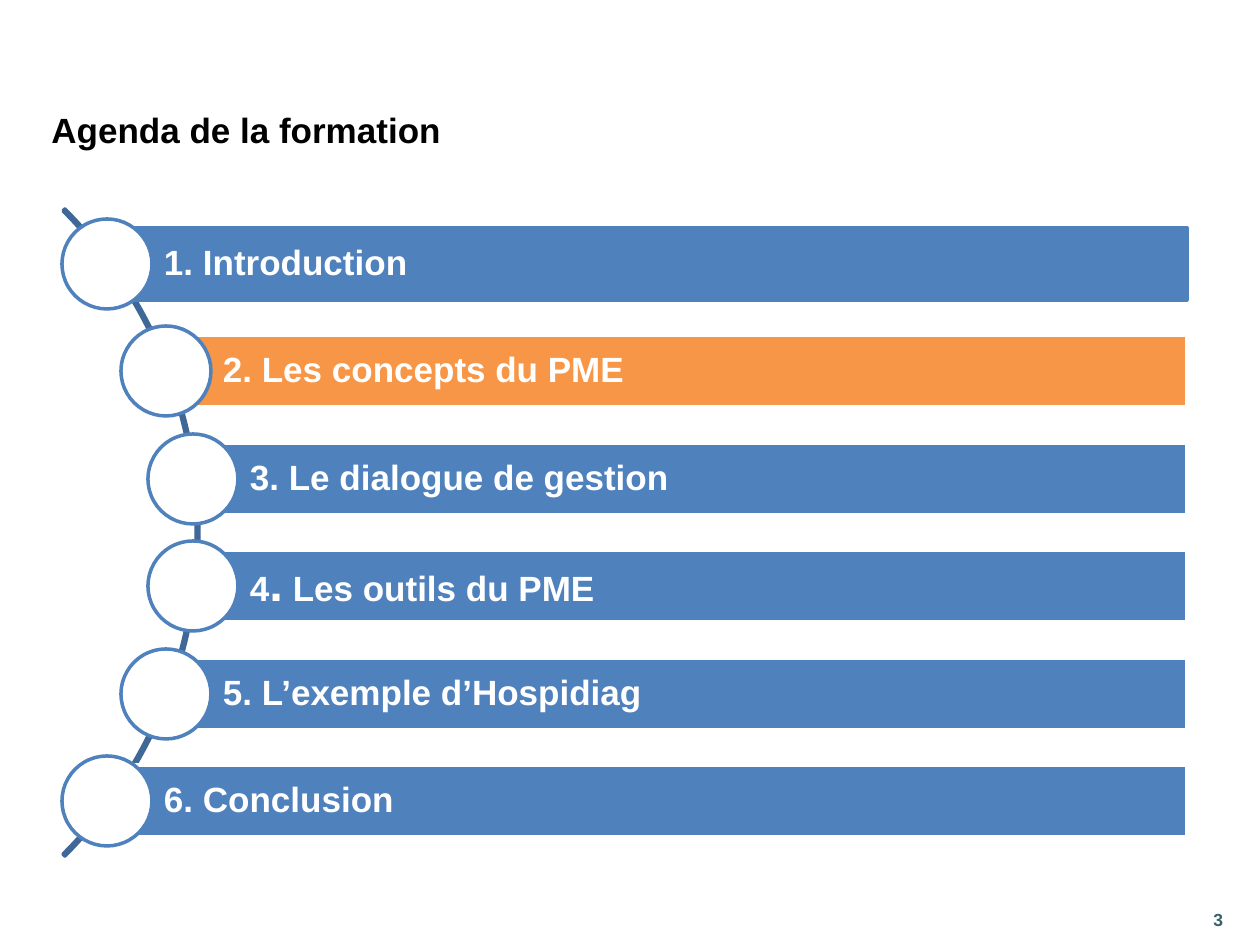
"""Build the training agenda slide: six bars strung along an arc."""
from dataclasses import dataclass

from pptx import Presentation
from pptx import util as u
from pptx.dml import color
from pptx.enum import shapes, text

SCALE = u.Inches(1) / 126
COLORS = {
    "blue": "4F81BD", "orange": "F79646", "arc": "3F6797",
    "white": "FFFFFF", "black": "000000", "page": "36616C",
}
FONT = {"name": "Arial", "bold": True}
FRAME = {"word_wrap": True, "vertical_anchor": text.MSO_ANCHOR.MIDDLE}
BAR_INSETS = {"margin_left": 57, "margin_right": 8, "margin_top": 8, "margin_bottom": 8}
FIRST_Y, LAST_Y, RIGHT = 264, 801, 1187
BAR_H, CIRCLE = 72, 90


@dataclass
class Item:
    """An agenda entry; x is the centre of its circle and the left of its bar."""
    x: int
    runs: list[tuple[str, int]]
    fill: str = "blue"
    line: str = "white"


ITEMS = [
    Item(107, [("1. Introduction", 20)], line="blue"),
    Item(166, [("2. Les concepts du PME", 20)], fill="orange"),
    Item(193, [("3. Le dialogue de gestion", 20)]),
    Item(193, [("4", 20), (".", 28), (" Les outils du PME", 20)]),
    Item(166, [("5. L’exemple d’Hospidiag", 20)]),
    Item(107, [("6. Conclusion", 20)]),
]


def px(n: int) -> u.Emu:
    """Turn pixels into EMU."""
    return u.Emu(round(n * SCALE))


def rgb(name: str) -> color.RGBColor:
    """Look up a named colour."""
    return color.RGBColor.from_string(COLORS[name])


def assign(obj, values: dict) -> None:
    """Set attributes from a dict of format values."""
    for key, value in values.items():
        setattr(obj, key, value)


def write(sp, runs: list[tuple[str, int]], ink: str, spacing: float = 1.0) -> None:
    """Write one left-aligned paragraph of (text, size) runs."""
    assign(sp.text_frame, FRAME)
    p = sp.text_frame.paragraphs[0]
    assign(p, {"alignment": text.PP_ALIGN.LEFT, "line_spacing": spacing})
    for content, size in runs:
        r = p.add_run()
        r.text = content
        assign(r.font, {**FONT, "size": u.Pt(size)})
        r.font.color.rgb = rgb(ink)


def add_label(s, box: tuple[int, int, int, int], content: str, size: int, ink: str) -> None:
    """Add a one-line text box."""
    write(s.shapes.add_textbox(*map(px, box)), [(content, size)], ink)


def add_shape(s, kind, box: tuple[int, int, int, int], line: str, fill: str | None = None):
    """Add a flat outlined preset shape."""
    sp = s.shapes.add_shape(kind, *map(px, box))
    sp.shadow.inherit = False
    if fill:
        sp.fill.solid()
        sp.fill.fore_color.rgb = rgb(fill)
    else:
        sp.fill.background()
    sp.line.color.rgb = rgb(line)
    sp.line.width = u.Pt(2)
    return sp


def add_item(s, item: Item, y: int) -> None:
    """Draw an entry's bar and circle centred on y."""
    bar = add_shape(s, shapes.MSO_SHAPE.RECTANGLE,
                    (item.x, y - BAR_H // 2, RIGHT - item.x, BAR_H), item.line, item.fill)
    assign(bar.text_frame, {k: px(v) for k, v in BAR_INSETS.items()})
    write(bar, item.runs, "white", 0.9)
    add_shape(s, shapes.MSO_SHAPE.OVAL,
              (item.x - CIRCLE // 2, y - CIRCLE // 2, CIRCLE, CIRCLE), "blue", "white")


def main() -> None:
    """Build and save the slide."""
    prs = Presentation()
    assign(prs, {"slide_width": u.Inches(10), "slide_height": u.Inches(7.5)})
    s = prs.slides.add_slide(prs.slide_layouts[6])
    add_label(s, (1201, 895, 59, 50), "3", 10, "page")
    add_label(s, (39, 98, 1203, 62), "Agenda de la formation", 20, "black")
    arc = add_shape(s, shapes.MSO_SHAPE.BLOCK_ARC, (-716, 75, 915, 915), "arc")
    for i, value in enumerate((189, 27, 0.003)):
        arc.adjustments[i] = value
    pitch = (LAST_Y - FIRST_Y) / (len(ITEMS) - 1)
    for i, item in enumerate(ITEMS):
        add_item(s, item, round(FIRST_Y + i * pitch))
    prs.save("out.pptx")


if __name__ == "__main__":
    main()
